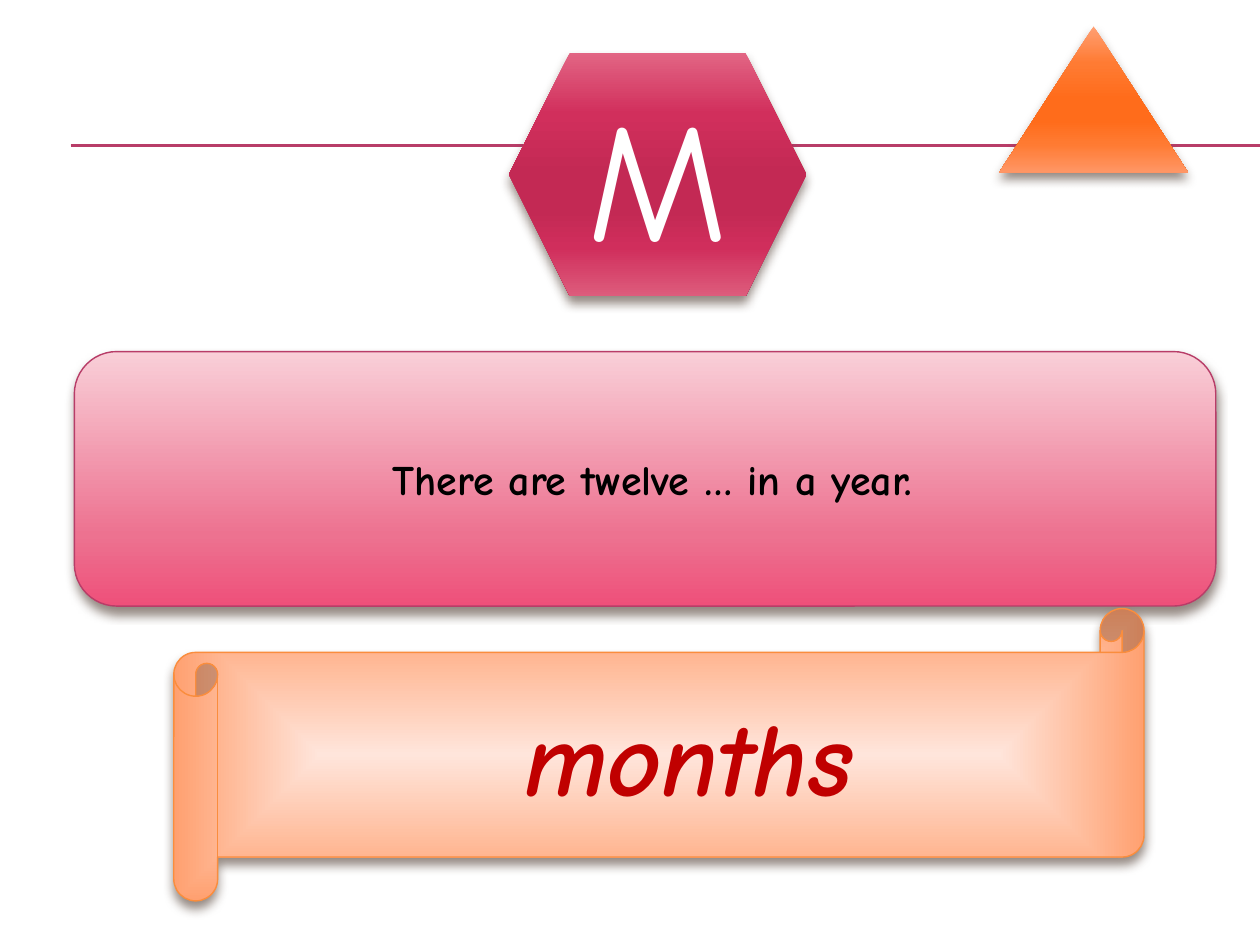
from lxml.etree import SubElement
from pptx import Presentation
from pptx.dml.color import RGBColor
from pptx.enum.shapes import MSO_CONNECTOR as CONNECTOR, MSO_SHAPE as SHAPE
from pptx.enum.text import MSO_ANCHOR as ANCHOR, PP_ALIGN as ALIGN
from pptx.oxml.ns import qn
from pptx.util import Inches, Pt

FONT = "Comic Neue"
COLORS = {
    "rule": "B83D68", "scroll_edge": "FA8D3D", "shadow": "4E3B30",
    "letter": "FFFFFF", "clue": "000000", "answer": "C00000",
}
# Gradient stops: (position in percent, colour)
GRADIENTS = {
    "triangle": [(0, "FF9F73"), (25, "FF7B33"), (50, "FF6C1B"),
                 (65, "FF6C1B"), (80, "FF7A31"), (100, "FF9665")],
    "hexagon": [(0, "E26584"), (25, "D12F5C"), (50, "C32954"),
                (65, "C32954"), (80, "D02E5C"), (100, "DD5C7C")],
    "clue": [(0, "F9CFD8"), (72, "ED7290"), (100, "EE507A")],
    "scroll": [(0, "FFE5DB"), (100, "FFA070")],
}


def rgb(name):
    return RGBColor.from_string(COLORS[name])


def set_gradient(shape, stops, from_centre=False):
    """Fill downwards, or outwards from the centre."""
    shape.fill.background()
    old_fill = shape._element.spPr.find(qn("a:noFill"))
    gradient = SubElement(shape._element.spPr, qn("a:gradFill"), rotWithShape="1")
    old_fill.getparent().replace(old_fill, gradient)
    stop_list = SubElement(gradient, qn("a:gsLst"))
    for position, color in stops:
        stop = SubElement(stop_list, qn("a:gs"), pos=str(position * 1000))
        SubElement(stop, qn("a:srgbClr"), val=color)
    if from_centre:
        centre = SubElement(gradient, qn("a:path"), path="rect")
        SubElement(centre, qn("a:fillToRect"), l="50000", t="50000", r="50000", b="50000")
    else:
        SubElement(gradient, qn("a:lin"), ang="5400000", scaled="0")


def set_shadow(shape):
    shape.shadow.inherit = False
    effects = shape._element.spPr.find(qn("a:effectLst"))
    shadow = SubElement(effects, qn("a:outerShdw"), blurRad=str(Pt(6)),
                        dist=str(Pt(4)), dir="5400000", rotWithShape="0")
    color = SubElement(shadow, qn("a:srgbClr"), val=COLORS["shadow"])
    SubElement(color, qn("a:alpha"), val="60000")


def add_block(page, kind, place, gradient, edge=None, from_centre=False):
    shape = page.shapes.add_shape(kind, *map(Inches, place))
    set_gradient(shape, GRADIENTS[gradient], from_centre)
    if edge:
        shape.line.color.rgb = rgb(edge)
        shape.line.width = Pt(0.79)
    else:
        shape.line.fill.background()
    set_shadow(shape)
    return shape


def write(shape, text, size, color, bold=False, italic=False):
    frame = shape.text_frame
    frame.text = text
    frame.word_wrap = True
    frame.vertical_anchor = ANCHOR.MIDDLE
    para = frame.paragraphs[0]
    para.alignment = ALIGN.CENTER
    font = para.runs[0].font
    font.name, font.size = FONT, Pt(size)
    font.bold, font.italic = bold, italic
    font.color.rgb = rgb(color)


def add_rule(page, y):
    rule = page.shapes.add_connector(
        CONNECTOR.STRAIGHT, Inches(0.56), Inches(y), Inches(10), Inches(y))
    rule.line.color.rgb = rgb("rule")
    rule.line.width = Pt(0.75)
    SubElement(rule._element.spPr, qn("a:effectLst"))


def main():
    deck = Presentation()
    deck.slide_width, deck.slide_height = Inches(10), Inches(7.5)
    page = deck.slides.add_slide(deck.slide_layouts[6])

    # Double rule across the top
    for y in (1.15, 1.16):
        add_rule(page, y)

    # Triangle and letter
    add_block(page, SHAPE.ISOSCELES_TRIANGLE, (7.93, 0.21, 1.5, 1.16), "triangle")
    letter = add_block(page, SHAPE.HEXAGON, (4.04, 0.42, 2.36, 1.93), "hexagon")
    write(letter, "M", 96, "letter")

    # Clue
    clue = add_block(page, SHAPE.ROUNDED_RECTANGLE, (0.59, 2.79, 9.06, 2.02),
                     "clue", "rule")
    write(clue, " There are twelve … in a year.", 24, "clue", bold=True)

    # Answer on a scroll
    answer = add_block(page, SHAPE.HORIZONTAL_SCROLL, (1.38, 4.83, 7.7, 2.32),
                       "scroll", "scroll_edge", from_centre=True)
    answer.adjustments[0] = 0.15
    write(answer, " months", 60, "answer", bold=True, italic=True)
    answer.text_frame.paragraphs[0].space_before = Pt(12)

    deck.save("out.pptx")


if __name__ == "__main__":
    main()
